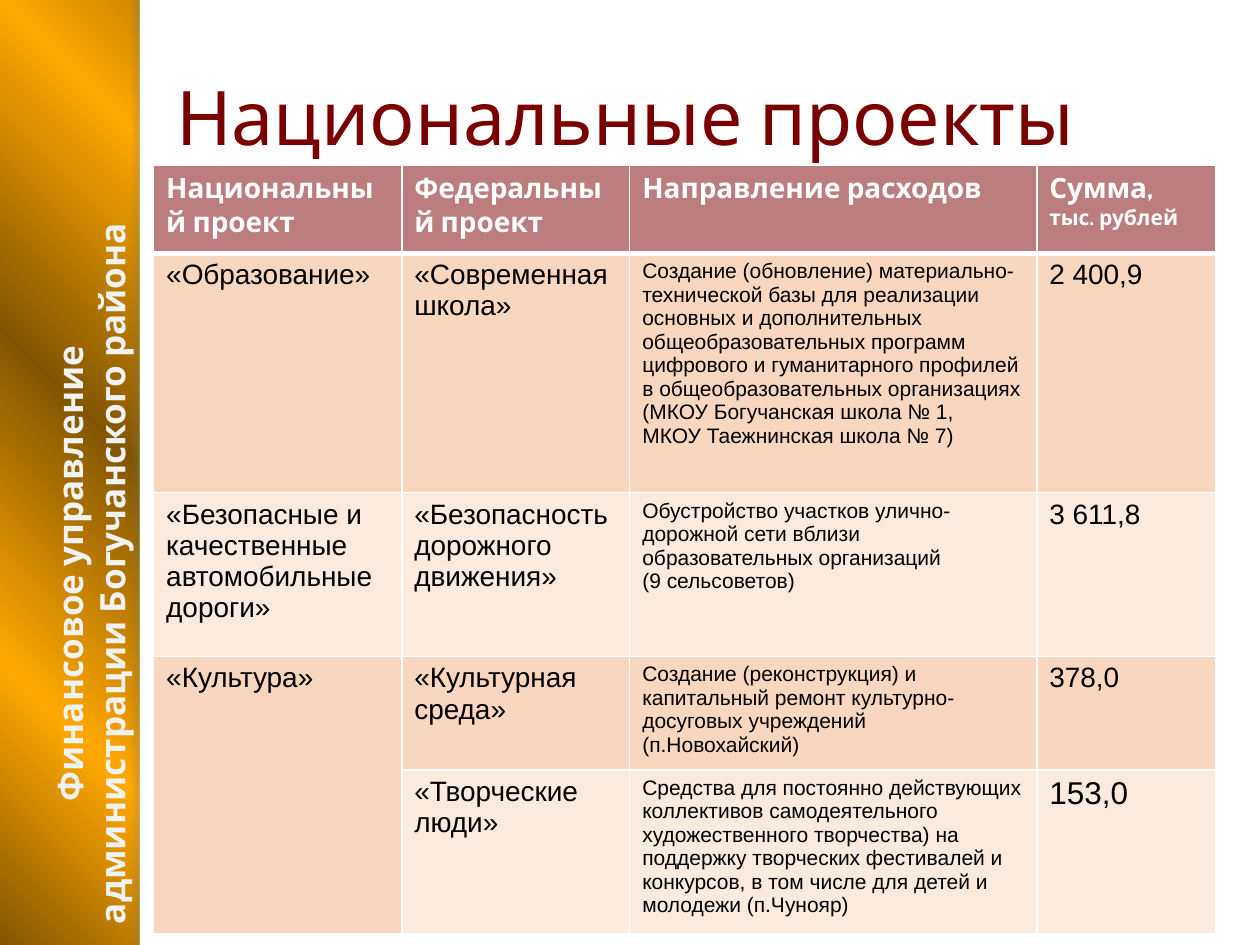
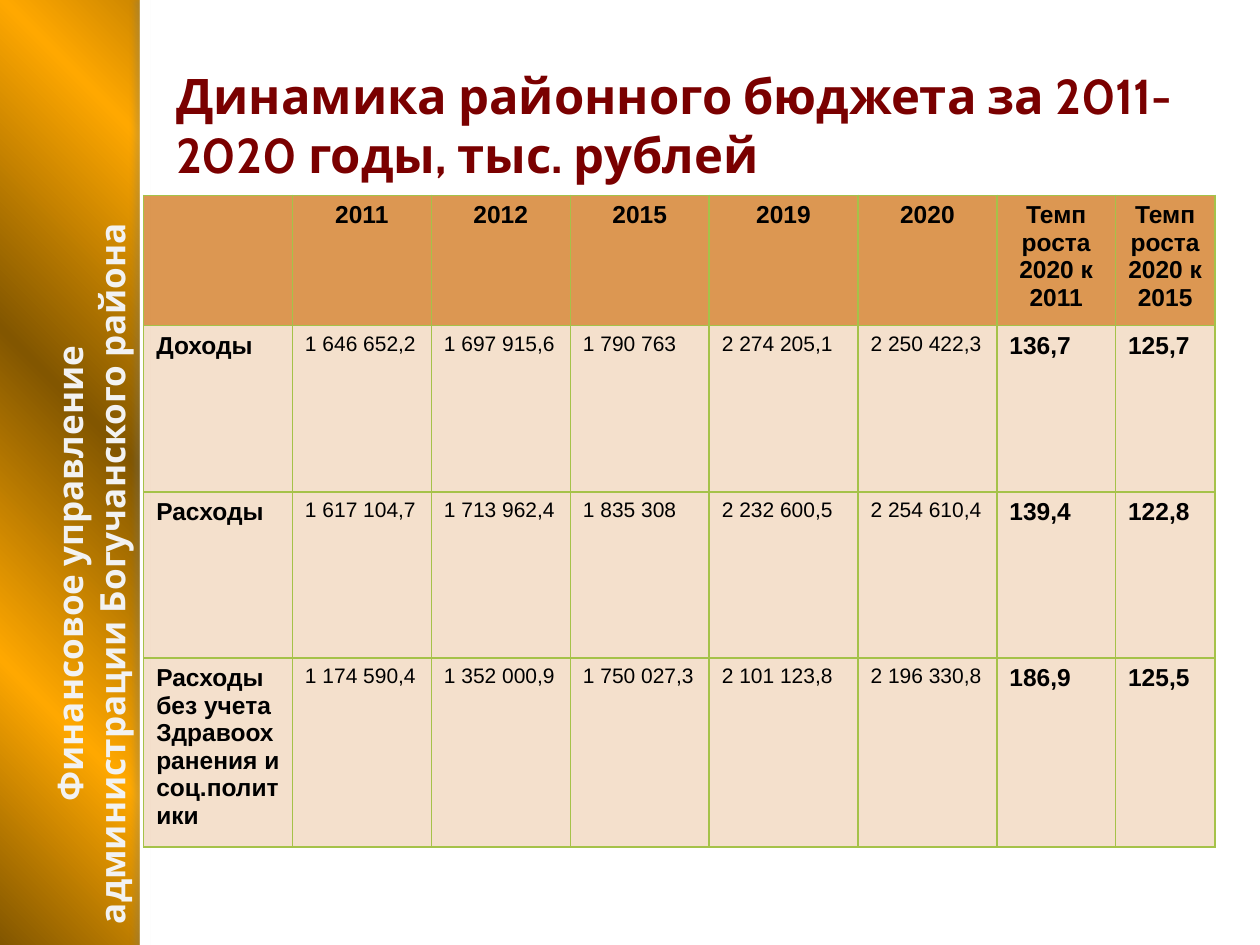
from dataclasses import dataclass

from lxml import etree
from pptx import Presentation
from pptx import util as u
from pptx.dml.color import RGBColor
from pptx.enum import shapes, text
from pptx.oxml import ns

Pt = u.Pt


@dataclass(frozen=True)
class Theme:
    head_font: str = "Cabin"
    body_font: str = "Arial"
    white: str = "FFFFFF"
    black: str = "000000"
    maroon: str = "7A0000"
    label: str = "F2F2F2"
    peach: str = "F8D7BE"
    orange: str = "CC6600"
    green: str = "A5C249"
    shadow: str = "6C7A7C"
    gold_dark: str = "825600"
    gold_light: str = "FFA800"
    gold_stops: tuple = (0, 13, 28, 43, 58, 72, 87, 100)
    title: float = 43
    subtitle: float = 28
    side: float = 20
    large: float = 18
    normal: float = 16
    medium: float = 14
    small: float = 12


@dataclass(frozen=True)
class TextStyle:
    size: float
    color: str
    font: str
    bold: bool = False
    align: text.PP_ALIGN = text.PP_ALIGN.LEFT


@dataclass(frozen=True)
class CellStyle:
    text: TextStyle
    fill: str
    alpha: int = 100


def add_xml(parent, tag, **attrs):
    return etree.SubElement(parent, ns.qn(tag), {k: str(v) for k, v in attrs.items()})


def add_color(parent, color, alpha=100):
    clr = add_xml(parent, "a:srgbClr", val=color)
    if alpha < 100:
        add_xml(clr, "a:alpha", val=alpha * 1000)


class Deck:
    """Builds the slides of the budget deck in one shared style."""

    def __init__(self, theme):
        self.th = theme
        self.prs = Presentation()
        self.prs.slide_width, self.prs.slide_height = Pt(720), Pt(540)
        self.s = None

    def slide(self):
        self.s = self.prs.slides.add_slide(self.prs.slide_layouts[6])
        self.background()
        self.panel(80, 640)
        self.edge_shadow(self.panel(80, 5.76))
        style = TextStyle(self.th.side, self.th.label, self.th.head_font, True,
                          text.PP_ALIGN.CENTER)
        sp = self.textbox("Финансовое управление администрации Богучанского района",
                          (-160, 300, 423.4, 55.4), style)
        sp.rotation = 270
        sp.text_frame.auto_size = text.MSO_AUTO_SIZE.SHAPE_TO_FIT_TEXT

    def background(self):
        th = self.th
        fill = self.s.background.fill
        fill.gradient()
        fill.gradient_angle = 45
        stops = self.s.element.find(".//" + ns.qn("a:gsLst"))
        for gs in list(stops):
            stops.remove(gs)
        for i, pos in enumerate(th.gold_stops):
            gs = add_xml(stops, "a:gs", pos=pos * 1000)
            add_color(gs, th.gold_light if i % 2 else th.gold_dark)

    def panel(self, left, width):
        sp = self.s.shapes.add_shape(shapes.MSO_SHAPE.RECTANGLE, Pt(left), 0,
                                     Pt(width), self.prs.slide_height)
        sp.shadow.inherit = False
        sp.fill.solid()
        sp.fill.fore_color.rgb = RGBColor.from_string(self.th.white)
        sp.line.fill.background()
        return sp

    def edge_shadow(self, sp):
        effects = sp.element.spPr.find(ns.qn("a:effectLst"))
        shadow = add_xml(effects, "a:outerShdw", blurRad=Pt(3), dist=Pt(3),
                         dir=180 * 60000, algn="tl", rotWithShape=0)
        add_color(shadow, self.th.shadow, 25)

    def format(self, p, style):
        p.alignment = style.align
        for r in p.runs:
            self.format_run(r, style)

    def format_run(self, r, style):
        r.font.size = Pt(style.size)
        r.font.name = style.font
        r.font.bold = style.bold
        r.font.color.rgb = RGBColor.from_string(style.color)

    def textbox(self, content, box, style):
        sp = self.s.shapes.add_textbox(*map(Pt, box))
        tf = sp.text_frame
        tf.word_wrap = True
        tf.text = content
        self.format(tf.paragraphs[0], style)
        return sp

    def title(self, content, top, size, bold=False):
        style = TextStyle(size, self.th.maroon, self.th.head_font, bold)
        sp = self.textbox(content, (93.6, top, 590.4, 90), style)
        sp.text_frame.vertical_anchor = text.MSO_ANCHOR.MIDDLE

    def borders(self, cell, color, bottom):
        tc_pr = cell._tc.get_or_add_tcPr()
        widths = {"L": 1, "R": 1, "T": 1, "B": bottom}
        for i, (side, width) in enumerate(widths.items()):
            ln = add_xml(tc_pr, "a:ln" + side, w=Pt(width))
            add_color(add_xml(ln, "a:solidFill"), color)
            tc_pr.insert(i, ln)

    def cell_fill(self, cell, style):
        cell.fill.solid()
        cell.fill.fore_color.rgb = RGBColor.from_string(style.fill)
        if style.alpha < 100:
            clr = cell._tc.tcPr.find(".//" + ns.qn("a:srgbClr"))
            add_xml(clr, "a:alpha", val=style.alpha * 1000)

    def table(self, rows, left, top, widths, heights, style_of, line, head_line=1):
        frame = self.s.shapes.add_table(len(rows), len(widths), Pt(left), Pt(top),
                                        Pt(sum(widths)), Pt(sum(heights)))
        tbl = frame.table
        tbl.first_row = tbl.horz_banding = False
        for col, width in zip(tbl.columns, widths):
            col.width = Pt(width)
        for row, height in zip(tbl.rows, heights):
            row.height = Pt(height)
        for i, row in enumerate(rows):
            for j, content in enumerate(row):
                cell, style = tbl.cell(i, j), style_of(i, j)
                cell.text_frame.text = content
                self.format(cell.text_frame.paragraphs[0], style.text)
                self.cell_fill(cell, style)
                self.borders(cell, line, 1 if i else head_line)
        return tbl


def projects_slide(deck):
    th = deck.th
    rows = [
        ("Национальный проект", "Федеральный проект", "Направление расходов", "Сумма,"),
        ("«Образование»", "«Современная школа»",
         "Создание (обновление) материально-технической базы для реализации основных и "
         "дополнительных общеобразовательных программ цифрового и гуманитарного профилей "
         "в общеобразовательных организациях (МКОУ Богучанская школа № 1,\v"
         "МКОУ Таежнинская школа № 7)", "2 400,9"),
        ("«Безопасные и качественные автомобильные дороги»",
         "«Безопасность дорожного движения»",
         "Обустройство участков улично-дорожной сети вблизи образовательных организаций\v"
         "(9 сельсоветов)", "3 611,8"),
        ("«Культура»", "«Культурная среда»",
         "Создание (реконструкция) и капитальный ремонт культурно-досуговых учреждений "
         "(п.Новохайский)", "378,0"),
        ("", "«Творческие люди»",
         "Средства для постоянно действующих коллективов самодеятельного художественного "
         "творчества) на поддержку творческих фестивалей и конкурсов, в том числе для "
         "детей и молодежи (п.Чунояр)", "153,0"),
    ]

    def style_of(i, j):
        if i == 0:
            return CellStyle(TextStyle(th.normal, th.white, th.head_font, True),
                             th.maroon, 51)
        size = th.small if j == 2 else th.large if (i, j) == (4, 3) else th.normal
        return CellStyle(TextStyle(size, th.black, th.body_font), th.peach,
                         100 if i % 2 else 50)

    deck.slide()
    deck.title("Национальные проекты", 20.9, th.title)
    tbl = deck.table(rows, 87.8, 94.3, (141.8, 130.3, 232.6, 102.2),
                     (50.4, 136.8, 93.6, 48.2, 46.8), style_of, th.white, 3)
    tbl.cell(3, 0).merge(tbl.cell(4, 0))
    r = tbl.cell(0, 3).text_frame.paragraphs[0].add_run()
    r.text = " тыс. рублей"
    deck.format_run(r, TextStyle(th.small, th.white, th.head_font, True))


def dynamics_slide(deck):
    th = deck.th
    rows = [
        ("", "2011", "2012", "2015", "2019", "2020",
         "Темп роста 2020 к 2011", "Темп роста 2020 к 2015"),
        ("Доходы", "1 646 652,2", "1 697 915,6", "1 790 763", "2 274 205,1",
         "2 250 422,3", "136,7", "125,7"),
        ("Расходы", "1 617 104,7", "1 713 962,4", "1 835 308", "2 232 600,5",
         "2 254 610,4", "139,4", "122,8"),
        ("Расходы без учета Здравоохранения и соц.политики", "1 174 590,4",
         "1 352 000,9", "1 750 027,3", "2 101 123,8", "2 196 330,8", "186,9", "125,5"),
    ]

    def style_of(i, j):
        head = i == 0
        bold = head or j in (0, 6, 7)
        align = text.PP_ALIGN.CENTER if head else text.PP_ALIGN.LEFT
        style = TextStyle(th.medium if bold else th.small, th.black, th.body_font,
                          bold, align)
        return CellStyle(style, th.orange, 68 if head else 20)

    deck.slide()
    deck.title("Динамика районного бюджета за 2011-2020 годы, тыс. рублей", 25.9,
               th.subtitle, True)
    year = 79.4
    deck.table(rows, 82.1, 111.6, (85, year, year, year, 85, year, 67.8, 56.8),
               (33.8, 95, 95, 95), style_of, th.green)


def main():
    deck = Deck(Theme())
    projects_slide(deck)
    dynamics_slide(deck)
    deck.prs.save("out.pptx")


if __name__ == "__main__":
    main()
